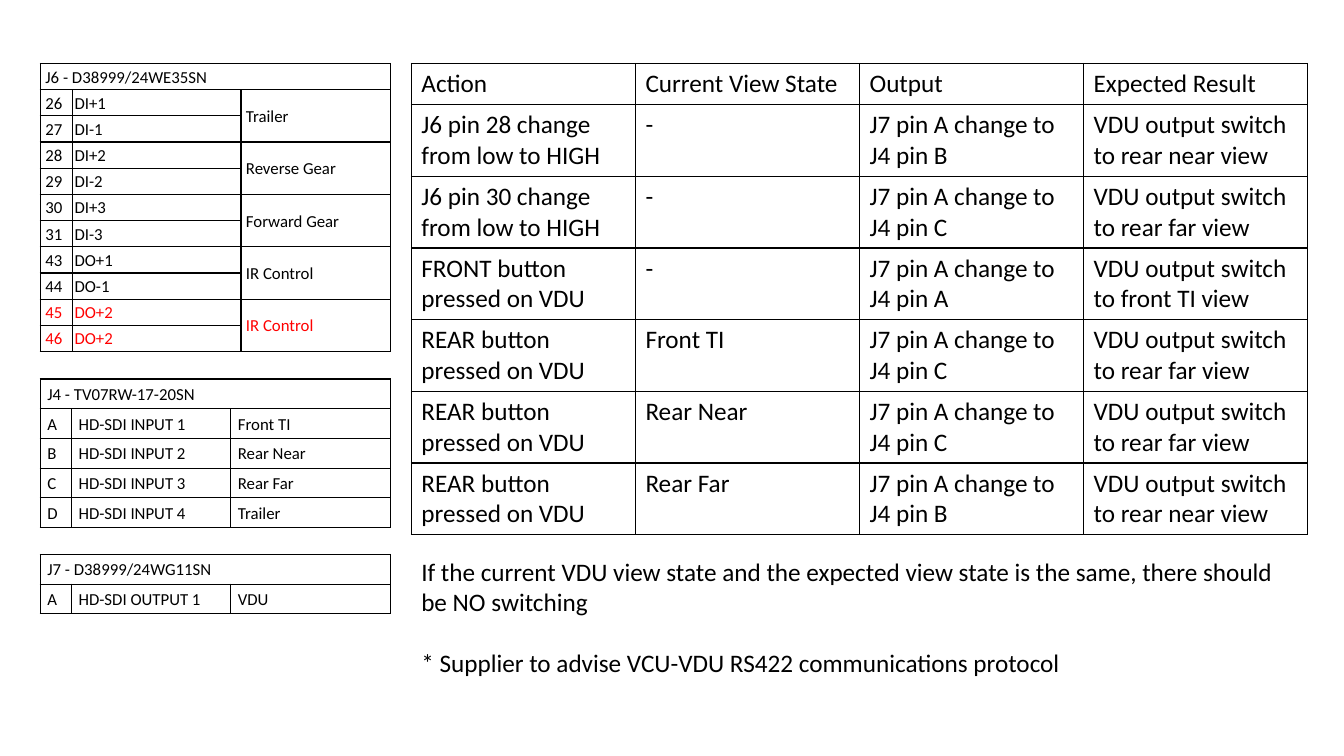
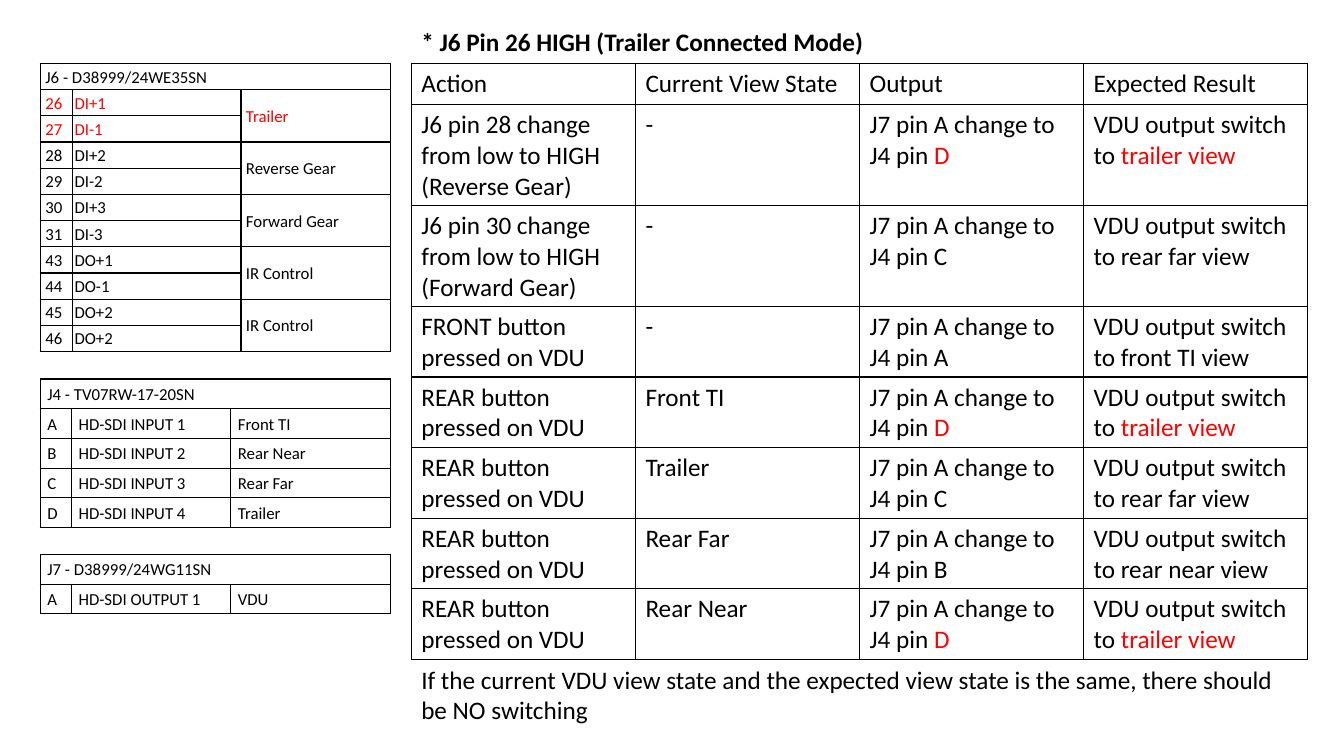
from lxml import etree
from pptx import Presentation
from pptx.dml.color import RGBColor
from pptx.enum.text import MSO_ANCHOR
from pptx.oxml.ns import qn
from pptx.util import Inches, Pt

COLORS = {"ink": "000000", "changed": "FF0000"}
FONT = "Calibri"
CONNECTOR_LEFT, CONNECTOR_WIDTH = 0.4, 3.47
MAIN_LEFT, MAIN_WIDTH = 4.08, 8.89
TABLE_TOP = 0.63

SIGNAL_PAIRS = [
    ("Trailer", [("26", "DI+1"), ("27", "DI-1")]),
    ("Reverse Gear", [("28", "DI+2"), ("29", "DI-2")]),
    ("Forward Gear", [("30", "DI+3"), ("31", "DI-3")]),
    ("IR Control", [("43", "DO+1"), ("44", "DO-1")]),
    ("IR Control", [("45", "DO+2"), ("46", "DO+2")]),
]
VIDEO_INPUTS = [
    ("A", "HD-SDI INPUT 1", "Front TI"),
    ("B", "HD-SDI INPUT 2", "Rear Near"),
    ("C", "HD-SDI INPUT 3", "Rear Far"),
    ("D", "HD-SDI INPUT 4", "Trailer"),
]
VIDEO_OUTPUTS = [("A", "HD-SDI OUTPUT 1", "VDU")]

HEADINGS = ("Action", "Current View State", "Output", "Expected Result")
REVERSE = "J6 pin 28 change from low to HIGH"
FORWARD = "J6 pin 30 change from low to HIGH"
FRONT = "FRONT button pressed on VDU"
REAR = "REAR button pressed on VDU"
# Text after a bar is shown in the changed colour.
VIEW_OF_PIN = {"A": "front TI view", "B": "rear near view",
               "C": "rear far view", "|D": "|trailer view"}
NORMAL_ACTIONS = [
    (REVERSE, "-", "B"),
    (FORWARD, "-", "C"),
    (FRONT, "-", "A"),
    (REAR, "Front TI", "C"),
    (REAR, "Rear Near", "C"),
    (REAR, "Rear Far", "B"),
]
TRAILER_ACTIONS = [
    (REVERSE + "\n(Reverse Gear)", "-", "|D"),
    (FORWARD + "\n(Forward Gear)", "-", "C"),
    (FRONT, "-", "A"),
    (REAR, "Front TI", "|D"),
    (REAR, "Trailer", "C"),
    (REAR, "Rear Far", "B"),
    (REAR, "Rear Near", "|D"),
]
NO_SWITCHING = ("If the current VDU view state and the expected view state "
                "is the same, there should be NO switching")
PROTOCOL = "* Supplier to advise VCU-VDU RS422 communications protocol"
TRAILER_MODE = "* J6 Pin 26 HIGH (Trailer Connected Mode)"


def rgb(name):
    return RGBColor.from_string(COLORS[name])


def write(frame, text, size=18, bold=False, line_spacing=None, gap=0):
    """Write one paragraph per line; the part after a bar is coloured."""
    for index, line in enumerate(text.split("\n")):
        paragraph = frame.add_paragraph() if index else frame.paragraphs[0]
        font = paragraph.font
        font.name, font.size, font.bold = FONT, Pt(size), bold
        font.color.rgb = rgb("ink")
        if line_spacing:
            paragraph.line_spacing = line_spacing
        if index and gap:
            paragraph.space_before = Pt(gap)
        plain, _, changed = line.partition("|")
        if plain:
            paragraph.add_run().text = plain
        if changed:
            run = paragraph.add_run()
            run.text = changed
            run.font.color.rgb = rgb("changed")


def outline(cell):
    cell.fill.background()
    properties = cell._tc.get_or_add_tcPr()
    for position, side in enumerate(("lnL", "lnR", "lnT", "lnB")):
        line = etree.Element(qn(f"a:{side}"), w=str(Pt(1)))
        fill = etree.SubElement(line, qn("a:solidFill"))
        etree.SubElement(fill, qn("a:srgbClr"), val=COLORS["ink"])
        properties.insert(position, line)


def add_grid(slide, left, top, widths, heights):
    """Add an unfilled table with a thin outline round every cell."""
    table = slide.shapes.add_table(
        len(heights), len(widths), Inches(left), Inches(top),
        Inches(sum(widths)), Inches(sum(heights))).table
    table.first_row = table.horz_banding = False
    for column, width in zip(table.columns, widths):
        column.width = Inches(width)
    for row, height in zip(table.rows, heights):
        row.height = Inches(height)
    for cell in table.iter_cells():
        outline(cell)
    return table


def write_pin_cell(cell, text, inset):
    cell.vertical_anchor = MSO_ANCHOR.MIDDLE
    cell.margin_left = cell.margin_right = Inches(inset)
    cell.margin_top = cell.margin_bottom = 0
    write(cell.text_frame, text, size=12, line_spacing=1.07)


def add_pin_title(table, title, inset):
    table.cell(0, 0).merge(table.cell(0, 2))
    write_pin_cell(table.cell(0, 0), title, inset)


def add_signal_table(slide, left, top, width, changed_pair):
    """Add the J6 pins, two to a signal, with one pair coloured."""
    widths = (0.32, 1.67, width - 1.99)
    table = add_grid(slide, left, top, widths, [0.26] * (1 + 2 * len(SIGNAL_PAIRS)))
    add_pin_title(table, "J6 - D38999/24WE35SN", 0.05)
    for index, (signal, pins) in enumerate(SIGNAL_PAIRS):
        first = 1 + 2 * index
        mark = "|" if index == changed_pair else ""
        table.cell(first, 2).merge(table.cell(first + 1, 2))
        write_pin_cell(table.cell(first, 2), mark + signal, 0.05)
        for row, (pin, name) in enumerate(pins, first):
            write_pin_cell(table.cell(row, 0), mark + pin, 0.05)
            write_pin_cell(table.cell(row, 1), mark + name, 0.02)


def add_video_table(slide, left, top, width, title, pins):
    widths = (0.31, (width - 0.31) / 2, (width - 0.31) / 2)
    table = add_grid(slide, left, top, widths, [0.295] * (1 + len(pins)))
    add_pin_title(table, title, 0.07)
    for row, pin in enumerate(pins, 1):
        for column, text in enumerate(pin):
            write_pin_cell(table.cell(row, column), text, 0.07)


def add_action_table(slide, left, top, width, actions):
    rows = [HEADINGS] + [
        (action, state, f"J7 pin A change to J4 pin {pin}",
         f"VDU output switch to {VIEW_OF_PIN[pin]}")
        for action, state, pin in actions]
    heights = [0.41] + [0.7 + 0.3 * action.count("\n") for action, _, _ in actions]
    table = add_grid(slide, left, top, [width / 4] * 4, heights)
    for row, texts in enumerate(rows):
        for column, text in enumerate(texts):
            write(table.cell(row, column).text_frame, text)


def add_note(slide, top, height, text, **style):
    box = slide.shapes.add_textbox(
        Inches(MAIN_LEFT), Inches(top), Inches(MAIN_WIDTH), Inches(height))
    box.text_frame.word_wrap = True
    write(box.text_frame, text, **style)


def add_switching_slide(deck, changed_pair, actions):
    """Add a slide with the connector pins on the left and actions on the right."""
    slide = deck.slides.add_slide(deck.slide_layouts[6])
    add_signal_table(slide, CONNECTOR_LEFT, TABLE_TOP, CONNECTOR_WIDTH, changed_pair)
    add_video_table(slide, CONNECTOR_LEFT, 3.76, CONNECTOR_WIDTH,
                    "J4 - TV07RW-17-20SN", VIDEO_INPUTS)
    add_video_table(slide, CONNECTOR_LEFT, 5.5, CONNECTOR_WIDTH,
                    "J7 - D38999/24WG11SN", VIDEO_OUTPUTS)
    add_action_table(slide, MAIN_LEFT, TABLE_TOP, MAIN_WIDTH, actions)
    return slide


def main():
    deck = Presentation()
    deck.slide_width, deck.slide_height = Inches(13.33), Inches(7.5)

    normal = add_switching_slide(deck, 4, NORMAL_ACTIONS)
    add_note(normal, 5.47, 1.31, f"{NO_SWITCHING}\n{PROTOCOL}", gap=22)

    trailer = add_switching_slide(deck, 0, TRAILER_ACTIONS)
    add_note(trailer, 6.54, 0.71, NO_SWITCHING)
    add_note(trailer, 0.21, 0.4, TRAILER_MODE, bold=True)

    deck.save("out.pptx")


if __name__ == "__main__":
    main()
